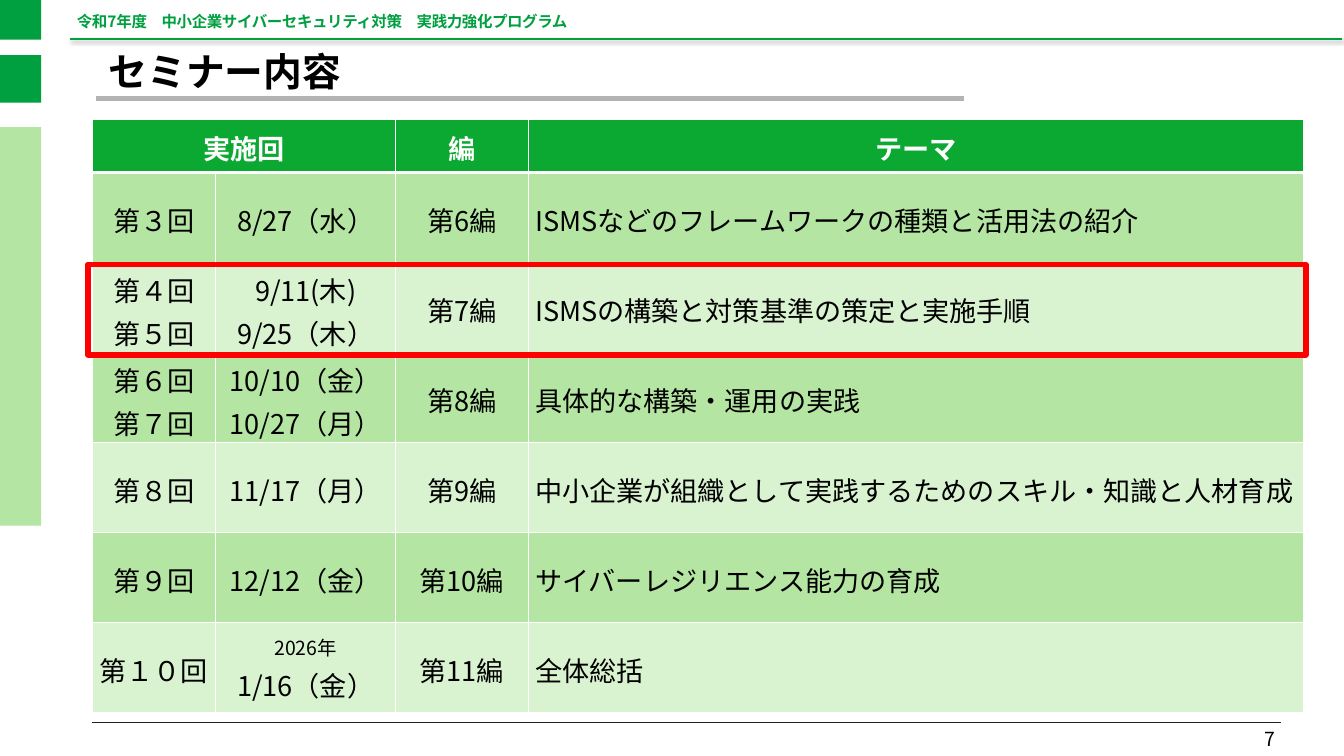
import pptx
import pptx.util
import pptx.dml.color
import pptx.enum.shapes
import pptx.enum.text
import pptx.oxml
import pptx.oxml.ns
from lxml import etree

Inches, Pt = pptx.util.Inches, pptx.util.Pt
ALIGN, ANCHOR = pptx.enum.text.PP_ALIGN, pptx.enum.text.MSO_ANCHOR
RECTANGLE = pptx.enum.shapes.MSO_SHAPE.RECTANGLE

FONT = "Noto Sans CJK JP"
COLORS = {
    "brand": "009F40", "header": "0BA931", "dark_row": "B4E5A2", "light_row": "D9F2D0",
    "gray": "B2B3B5", "footer": "222222", "red": "FF0000", "black": "000000", "white": "FFFFFF",
}
PROGRAM = "令和7年度　中小企業サイバーセキュリティ対策　実践力強化プログラム"
TITLE = "セミナー内容"
PAGE = "7"
HEADINGS = ["実施回", "", "編", "テーマ"]
SESSIONS = [
    (["第３回"], ["8/27（水）"], "第6編", "ISMSなどのフレームワークの種類と活用法の紹介"),
    (["第４回", "第５回"], ["9/11(木)", "9/25（木）"], "第7編", "ISMSの構築と対策基準の策定と実施手順"),
    (["第６回", "第７回"], ["10/10（金）", "10/27（月）"], "第8編", "具体的な構築・運用の実践"),
    (["第８回"], ["11/17（月）"], "第9編", "中小企業が組織として実践するためのスキル・知識と人材育成"),
    (["第９回"], ["12/12（金）"], "第10編", "サイバーレジリエンス能力の育成"),
    (["第１０回"], ["2026年", "1/16（金）"], "第11編", "全体総括"),
]
SMALL_LINE = "2026年"
COLUMN_WIDTHS = [1.77, 2.58, 1.9, 11.11]
HEADER_HEIGHT, SESSION_HEIGHT = 0.76, 1.29
SIDE_BLOCKS = [(0, 0.57, "brand"), (0.79, 0.68, "brand"), (1.82, 5.71, "dark_row")]
RULES = [(1, 19.23, 0.56, "brand", 2), (1.32, 18.36, 10.35, "footer", 1), (1.38, 13.81, 1.41, "gray", 6)]


def rgb(name):
    return pptx.dml.color.RGBColor.from_string(COLORS[name])


def add_run(paragraph, text, size, color, bold=False):
    run = paragraph.add_run()
    run.text = text
    run.font.size, run.font.bold, run.font.name = Pt(size), bold, FONT
    run.font.color.rgb = rgb(color)
    east_asian = etree.SubElement(run.font._element, pptx.oxml.ns.qn("a:ea"))
    east_asian.set("typeface", FONT)
    return run


def add_label(slide, box, text, size, color, bold=False, anchor=ANCHOR.TOP):
    label = slide.shapes.add_textbox(*map(Inches, box))
    label.text_frame.word_wrap = True
    label.text_frame.vertical_anchor = anchor
    paragraph = label.text_frame.paragraphs[0]
    return label.text_frame, paragraph, add_run(paragraph, text, size, color, bold)


def add_rule(slide, left, right, top, color, width):
    rule = slide.shapes.add_connector(
        pptx.enum.shapes.MSO_CONNECTOR.STRAIGHT, *map(Inches, (left, top, right, top)))
    rule.line.color.rgb, rule.line.width = rgb(color), Pt(width)
    return etree.SubElement(rule._element.spPr, pptx.oxml.ns.qn("a:effectLst"))


def add_borders(cell, widths):
    for side, width in zip("LRTB", widths):
        cell._tc.get_or_add_tcPr().append(pptx.oxml.parse_xml(
            f'<a:ln{side} {pptx.oxml.ns.nsdecls("a")} w="{Pt(width)}"><a:solidFill>'
            f'<a:srgbClr val="{COLORS["white"]}"/></a:solidFill></a:ln{side}>'))


def fill_cell(cell, lines, fill, color, bold, centered, borders):
    add_borders(cell, borders)
    cell.fill.solid()
    cell.fill.fore_color.rgb = rgb(fill)
    cell.vertical_anchor = ANCHOR.MIDDLE
    for index, line in enumerate(lines):
        frame = cell.text_frame
        paragraph = frame.add_paragraph() if index else frame.paragraphs[0]
        paragraph.alignment = ALIGN.CENTER if centered else ALIGN.LEFT
        paragraph.line_spacing = 1.1
        if line:
            add_run(paragraph, line, 20 if line == SMALL_LINE else 28, color, bold)


def add_schedule(slide):
    height = HEADER_HEIGHT + SESSION_HEIGHT * len(SESSIONS)
    schedule = slide.shapes.add_table(
        len(SESSIONS) + 1, len(COLUMN_WIDTHS),
        *map(Inches, (1.32, 1.71, sum(COLUMN_WIDTHS), height))).table
    for column, width in zip(schedule.columns, COLUMN_WIDTHS):
        column.width = Inches(width)
    for index, row in enumerate(schedule.rows):
        row.height = Inches(SESSION_HEIGHT if index else HEADER_HEIGHT)
    for column, heading in enumerate(HEADINGS):
        fill_cell(schedule.cell(0, column), [heading], "header", "white", True, True, (1, 1, 1, 3))
    schedule.cell(0, 0).merge(schedule.cell(0, 1))
    for row, (rounds, dates, part, theme) in enumerate(SESSIONS, 1):
        fill = "dark_row" if row % 2 else "light_row"
        borders = (1, 1, 3 if row == 1 else 1, 1)
        for column, lines in enumerate((rounds, dates, [part], [theme])):
            fill_cell(schedule.cell(row, column), lines, fill, "black", False, column < 3, borders)


def main():
    deck = pptx.Presentation()
    deck.slide_width, deck.slide_height = Inches(19.26), Inches(10.83)
    slide = deck.slides.add_slide(deck.slide_layouts[6])

    header_effects, *_ = [add_rule(slide, *rule) for rule in RULES]
    header_effects.append(pptx.oxml.parse_xml(
        f'<a:outerShdw {pptx.oxml.ns.nsdecls("a")} blurRad="{Pt(4)}" dist="{Pt(3)}" dir="2700000">'
        f'<a:srgbClr val="{COLORS["black"]}"><a:alpha val="40000"/></a:srgbClr></a:outerShdw>'))

    for top, height, color in SIDE_BLOCKS:
        block = slide.shapes.add_shape(RECTANGLE, *map(Inches, (0, top, 0.59, height)))
        block.shadow.inherit = False
        block.fill.solid()
        block.fill.fore_color.rgb = rgb(color)
        block.line.fill.background()

    frame, paragraph, run = add_label(slide, (1.1, 0.22, 17.48, 0.22), PROGRAM, 16, "brand", True)
    frame.margin_left = frame.margin_right = frame.margin_bottom = 0
    frame.margin_top = Inches(0.01)
    paragraph.line_spacing = Pt(15)
    run.font._element.set("spc", "-40")

    _, paragraph, _ = add_label(slide, (14.05, 10.22, 4.33, 0.58), PAGE, 20, "black", anchor=ANCHOR.BOTTOM)
    paragraph.alignment = ALIGN.RIGHT

    _, paragraph, _ = add_label(slide, (1.46, 0.76, 16.34, 0.61), TITLE, 40, "black", True, ANCHOR.MIDDLE)
    paragraph.line_spacing, paragraph.space_before = 0.9, Pt(10)

    add_schedule(slide)

    highlight = slide.shapes.add_shape(RECTANGLE, *map(Inches, (1.26, 3.79, 17.45, SESSION_HEIGHT)))
    highlight.shadow.inherit = False
    highlight.fill.background()
    highlight.line.color.rgb, highlight.line.width = rgb("red"), Pt(6)

    deck.save("out.pptx")


if __name__ == "__main__":
    main()
